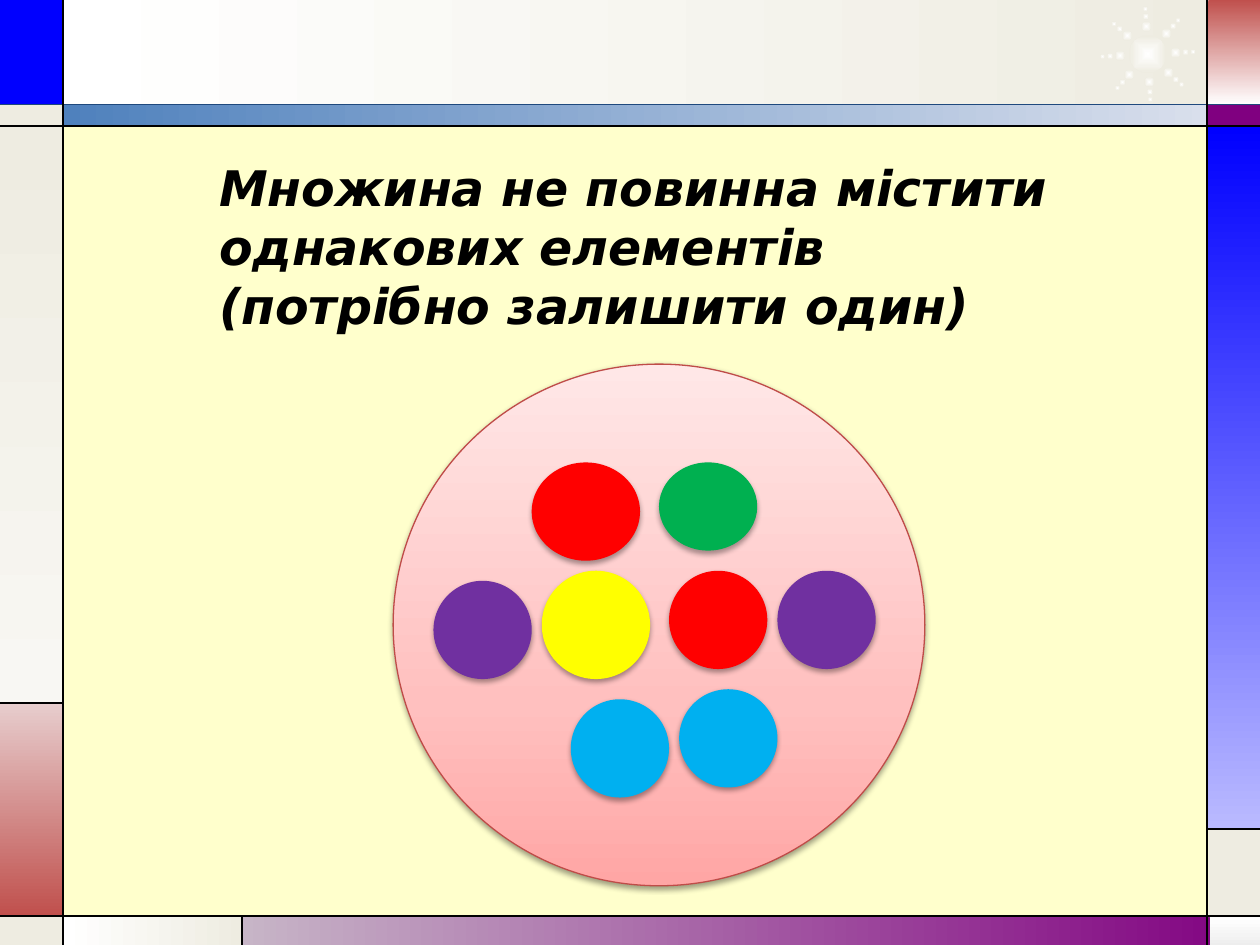
import math
from dataclasses import dataclass

from pptx import Presentation
from pptx.dml.color import RGBColor
from pptx.enum import shapes, text
from pptx.oxml import parse_xml
from pptx.oxml.ns import nsdecls, qn
from pptx.util import Inches, Pt


@dataclass(frozen=True)
class Theme:
    page: str = "FFFFCC"
    ink: str = "000000"
    white: str = "FFFFFF"
    cream: str = "EEECE1"
    pale_cream: str = "F8F7F3"
    blue: str = "0000FF"
    pale_blue: str = "BABAFF"
    steel: str = "4F81BD"
    pale_steel: str = "D9DFEC"
    navy: str = "1F497D"
    brick: str = "C0504D"
    pale_brick: str = "E7CDCD"
    plum: str = "800080"
    pale_plum: str = "C7B5C7"
    pale_grey: str = "EDEDED"
    set_outline: str = "BF4C48"
    set_stops: tuple = ((0, "FFA6A5"), (35, "FFC0BF"), (100, "FFE7E7"))
    red: str = "FF0000"
    green: str = "00B050"
    yellow: str = "FFFF00"
    sky: str = "00B0F0"
    violet: str = "7030A0"
    font: str = "DejaVu Sans"
    title_size: int = 28
    line_width: float = 0.75


THEME = Theme()


def gradient(stops, angle=None):
    """Gradient fill XML; without an angle it spreads from the centre."""
    stop_xml = "".join(
        f'<a:gs pos="{pos * 1000}"><a:srgbClr val="{color}"/></a:gs>' for pos, color in stops
    )
    if angle is None:
        direction = ('<a:path path="shape"><a:fillToRect l="50000" t="50000" '
                     'r="50000" b="50000"/></a:path>')
    else:
        direction = f'<a:lin ang="{angle * 60000}" scaled="0"/>'
    return parse_xml(
        f'<a:gradFill {nsdecls("a")} rotWithShape="1"><a:gsLst>{stop_xml}</a:gsLst>'
        f"{direction}</a:gradFill>"
    )


def add_shadow(shape, opacity, distance):
    effects = shape._element.spPr.find(qn("a:effectLst"))
    effects.append(parse_xml(
        f'<a:outerShdw {nsdecls("a")} blurRad="{Pt(3.1)}" dist="{Pt(distance)}" '
        f'dir="5400000" rotWithShape="0"><a:srgbClr val="{THEME.ink}">'
        f'<a:alpha val="{opacity * 1000}"/></a:srgbClr></a:outerShdw>'
    ))


def add_filled(slide, kind, box, colors, angle=None, outline=None):
    """Add a shape filled with one colour, or with a gradient of (position, colour) stops."""
    shape = slide.shapes.add_shape(kind, *map(Inches, box))
    shape.shadow.inherit = False
    if isinstance(colors, str):
        shape.fill.solid()
        shape.fill.fore_color.rgb = RGBColor.from_string(colors)
    else:
        shape.fill.background()
        properties = shape._element.spPr
        properties.replace(properties.find(qn("a:noFill")), gradient(colors, angle))
    if outline:
        shape.line.color.rgb = RGBColor.from_string(outline)
        shape.line.width = Pt(THEME.line_width)
    else:
        shape.line.fill.background()
    return shape


def add_panel(slide, box, start, end=None, angle=0):
    colors = ((0, start), (100, end)) if end else start
    add_filled(slide, shapes.MSO_SHAPE.RECTANGLE, box, colors, angle)


def add_circle(slide, center, diameter, colors):
    box = (center[0] - diameter / 2, center[1] - diameter / 2, diameter, diameter)
    add_filled(slide, shapes.MSO_SHAPE.OVAL, box, colors)


def add_rule(slide, start, end, color=THEME.ink):
    rule = slide.shapes.add_connector(
        shapes.MSO_CONNECTOR.STRAIGHT, *map(Inches, (*start, *end)))
    rule.line.color.rgb = RGBColor.from_string(color)
    rule.line.width = Pt(THEME.line_width)
    rule._element.spPr.append(parse_xml(f'<a:effectLst {nsdecls("a")}/>'))


def add_text(slide, box, words, *, size, color, bold=False, italic=False,
             anchor=text.MSO_ANCHOR.MIDDLE):
    frame = slide.shapes.add_textbox(*map(Inches, box)).text_frame
    frame.word_wrap = True
    frame.vertical_anchor = anchor
    paragraph = frame.paragraphs[0]
    paragraph.text = words
    paragraph.alignment = text.PP_ALIGN.LEFT
    for run in paragraph.runs:
        run.font.name = THEME.font
        run.font.size = Pt(size)
        run.font.bold = bold
        run.font.italic = italic
        run.font.color.rgb = RGBColor.from_string(color)


def add_frame_panels(slide):
    t = THEME
    for panel in (
        ((0.5, 0, 9.27, 0.84), t.white, t.cream),
        ((0, 0, 0.5, 0.84), t.blue),
        ((0, 0.83, 0.5, 0.17), t.cream),
        ((0, 1, 0.5, 4.58), t.cream, t.pale_cream, 90),
        ((0, 5.58, 0.5, 1.69), t.pale_brick, t.brick, 90),
        ((0, 7.28, 0.5, 0.23), t.cream),
        ((0.5, 7.27, 1.43, 0.24), t.white, t.cream),
        ((1.92, 7.27, 8.08, 0.24), t.pale_plum, t.plum),
        ((9.6, 7.28, 0.4, 0.23), t.white, t.pale_grey, 90),
        ((9.59, 6.58, 0.41, 0.7), t.cream),
        ((9.58, 1, 0.42, 5.58), t.blue, t.pale_blue, 90),
        ((9.58, 0.83, 0.42, 0.17), t.plum),
        ((9.59, 0, 0.41, 0.83), t.brick, t.white, 90),
        ((0.5, 0.83, 9.09, 0.17), t.steel, t.pale_steel),
    ):
        add_panel(slide, *panel)


def add_sun(slide):
    """A glowing disc with eight rays of three shrinking dots."""
    x, y = 9.11, 0.43
    glow = ((0, THEME.white), (100, THEME.cream))
    add_circle(slide, (x, y), 0.3, glow)
    for ray in range(8):
        angle = math.radians(45 * ray - 3)
        for radius, diameter in ((0.22, 0.08), (0.3, 0.05), (0.36, 0.04)):
            center = (x + radius * math.cos(angle), y + radius * math.sin(angle))
            add_circle(slide, center, diameter, glow)


def add_frame_rules(slide):
    add_rule(slide, (0, 0.83), (10, 0.83), THEME.navy)
    for start, end in (
        ((0, 1), (10, 1)),
        ((0, 7.27), (10, 7.27)),
        ((0.5, 0), (0.5, 7.5)),
        ((9.58, 0), (9.58, 7.5)),
        ((0, 5.58), (0.5, 5.58)),
        ((1.92, 7.27), (1.92, 7.5)),
        ((9.58, 6.58), (10, 6.58)),
    ):
        add_rule(slide, start, end)


def add_set(slide):
    """The large set circle and its elements, some of them repeated."""
    oval = shapes.MSO_SHAPE.OVAL
    whole = add_filled(slide, oval, (3.12, 2.89, 4.22, 4.14), THEME.set_stops, 270,
                       THEME.set_outline)
    add_shadow(whole, 38, 1.6)
    for color, *box in (
        (THEME.red, 5.31, 4.53, 0.78, 0.78),
        (THEME.red, 4.22, 3.67, 0.86, 0.78),
        (THEME.green, 5.23, 3.67, 0.78, 0.7),
        (THEME.yellow, 4.3, 4.53, 0.86, 0.86),
        (THEME.sky, 4.53, 5.55, 0.78, 0.78),
        (THEME.sky, 5.39, 5.47, 0.78, 0.78),
        (THEME.violet, 6.17, 4.53, 0.78, 0.78),
        (THEME.violet, 3.44, 4.61, 0.78, 0.78),
    ):
        add_shadow(add_filled(slide, oval, box, color), 35, 1.8)


def main():
    deck = Presentation()
    deck.slide_width, deck.slide_height = Inches(10), Inches(7.5)
    slide = deck.slides.add_slide(deck.slide_layouts[6])
    slide.background.fill.solid()
    slide.background.fill.fore_color.rgb = RGBColor.from_string(THEME.page)
    add_frame_panels(slide)
    add_sun(slide)
    add_frame_rules(slide)
    add_text(slide, (1.64, 1.33, 7.33, 1.24),
             "Множина не повинна містити однакових елементів \v(потрібно залишити один)",
             size=THEME.title_size, color=THEME.ink, bold=True, italic=True)
    add_set(slide)
    deck.save("out.pptx")


if __name__ == "__main__":
    main()
